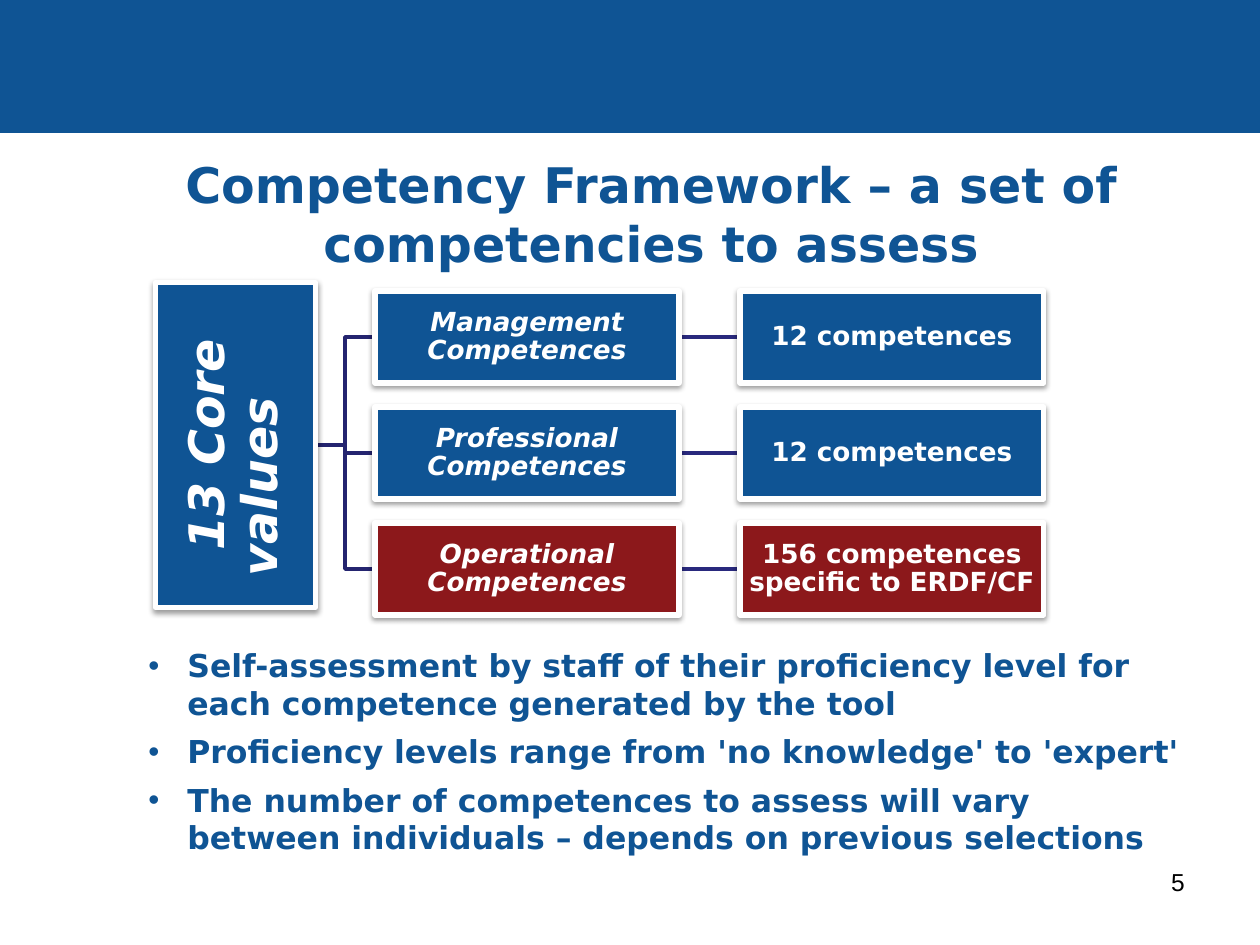
from lxml.etree import SubElement
from pptx import Presentation
from pptx.dml.color import RGBColor
from pptx.enum.shapes import MSO_CONNECTOR, MSO_SHAPE
from pptx.enum.text import MSO_ANCHOR, PP_ALIGN
from pptx.oxml import parse_xml
from pptx.oxml.ns import qn
from pptx.util import Emu, Pt

# Content
TITLE = "Competency Framework – a set of competencies to assess"
CORE = ["13 Core", "values"]
ROWS = [
    ("Management Competences", "12 competences", "blue"),
    ("Professional Competences", "12 competences", "blue"),
    ("Operational Competences", "156 competences specific to ERDF/CF", "red"),
]
BULLETS = [
    "Self-assessment by staff of their proficiency level for each competence generated by the tool",
    "Proficiency levels range from 'no knowledge' to 'expert'",
    "The number of competences to assess will vary between individuals – depends on previous selections",
]
PAGE = "5"

THEME = {
    "blue": "0F5494", "red": "8C181B", "white": "FFFFFF", "black": "000000",
    "elbow": "24246F", "link": "29297D",
    "font": "DejaVu Sans", "page_font": "Arial",
    "title": 28, "core": 28, "box": 15, "bullet": 18, "page": 14,
}

# Layout in px
SCALE = 914400 / 126
BANNER = (0, 0, 1260, 132)
TITLE_BOX = (84, 179, 1134, 128)
PAGE_BOX = (903, 861, 294, 66)
BULLET_BOX = (136, 640, 1061, 270)
CORE_BOX = (73, 365, 325, 160)
COL_X, COL_STEP, BOX_W = 375, 365, 304
ROW_Y, ROW_STEP, BOX_H = 291, 116, 92
CORE_RIGHT, CORE_MID, TRUNK_X = 315, 445, 345

SHADOW = (
    '<a:effectLst xmlns:a="http://schemas.openxmlformats.org/drawingml/2006/main">'
    '<a:outerShdw blurRad="39370" dist="20320" dir="5400000" rotWithShape="0">'
    '<a:srgbClr val="000000"><a:alpha val="38000"/></a:srgbClr>'
    '</a:outerShdw></a:effectLst>'
)


def px(n):
    return Emu(round(n * SCALE))


def color(name):
    return RGBColor.from_string(THEME[name])


def set_line(line, name, width):
    line.color.rgb = color(name)
    line.width = Pt(width)


def style(p, size, name, align, font="font", bold=True, italic=False):
    p.alignment = align
    f = p.font
    f.name, f.size, f.bold, f.italic = THEME[font], Pt(THEME[size]), bold, italic
    f.color.rgb = color(name)


def add_rect(shapes, at, fill, line, width):
    sp = shapes.add_shape(MSO_SHAPE.RECTANGLE, *map(px, at))
    sp.shadow.inherit = False
    sp.fill.solid()
    sp.fill.fore_color.rgb = color(fill)
    set_line(sp.line, line, width)
    return sp


def add_text(shapes, at, paragraphs):
    tf = shapes.add_textbox(*map(px, at)).text_frame
    tf.word_wrap = True
    tf.text = "\n".join(paragraphs)
    return tf


def add_card(shapes, at, fill, lines, size, inset, italic):
    sp = add_rect(shapes, at, fill, "white", 3)
    pr = sp._element.spPr
    pr.replace(pr.find(qn("a:effectLst")), parse_xml(SHADOW))
    tf = sp.text_frame
    tf.word_wrap = True
    tf.vertical_anchor = MSO_ANCHOR.MIDDLE
    tf.margin_left = tf.margin_right = tf.margin_top = tf.margin_bottom = px(inset)
    tf.text = "\n".join(lines)
    for p in tf.paragraphs:
        style(p, size, "white", PP_ALIGN.CENTER, italic=italic)
        p.line_spacing = 0.9
    return sp


def add_elbow(shapes, y):
    fb = shapes.build_freeform(CORE_RIGHT, CORE_MID, scale=SCALE)
    fb.add_line_segments([(TRUNK_X, CORE_MID), (TRUNK_X, y), (COL_X, y)], close=False)
    sp = fb.convert_to_shape()
    sp.shadow.inherit = False
    sp.fill.background()
    set_line(sp.line, "elbow", 2)


def add_link(shapes, y):
    c = shapes.add_connector(MSO_CONNECTOR.STRAIGHT, px(COL_X + BOX_W), px(y),
                             px(COL_X + COL_STEP), px(y))
    set_line(c.line, "link", 2)
    SubElement(c._element.spPr, qn("a:effectLst"))


def main():
    prs = Presentation()
    prs.slide_width, prs.slide_height = px(1260), px(945)
    s = prs.slides.add_slide(prs.slide_layouts[6]).shapes

    # Banner, title and page number
    add_rect(s, BANNER, "blue", "blue", 0.75)
    tf = add_text(s, TITLE_BOX, [TITLE])
    tf.vertical_anchor = MSO_ANCHOR.MIDDLE
    tf.margin_bottom = px(66)
    style(tf.paragraphs[0], "title", "blue", PP_ALIGN.CENTER)
    tf = add_text(s, PAGE_BOX, [PAGE])
    style(tf.paragraphs[0], "page", "black", PP_ALIGN.RIGHT, "page_font", False)

    # Connecting lines, behind the cards
    tops = [ROW_Y + i * ROW_STEP for i in range(len(ROWS))]
    for top in tops:
        add_elbow(s, top + BOX_H // 2)
        add_link(s, top + BOX_H // 2)

    # Core card, with its second line shifted towards the start
    core = add_card(s, CORE_BOX, "blue", CORE, "core", 2, True)
    core.rotation = 270
    core.text_frame.paragraphs[1]._p.get_or_add_pPr().set("marR", str(px(84)))

    # Competence cards
    for top, (kind, count, fill) in zip(tops, ROWS):
        for col, text in enumerate((kind, count)):
            at = (COL_X + col * COL_STEP, top, BOX_W, BOX_H)
            add_card(s, at, fill, [text], "box", 1, col == 0)

    # Bullets
    tf = add_text(s, BULLET_BOX, BULLETS)
    for p in tf.paragraphs:
        pr = p._p.get_or_add_pPr()
        pr.set("marL", str(px(39)))
        pr.set("indent", str(px(-39)))
        SubElement(pr, qn("a:buFont")).set("typeface", "Arial")
        SubElement(pr, qn("a:buChar")).set("char", "•")
        style(p, "bullet", "blue", PP_ALIGN.LEFT)
        p.space_after = Pt(6)

    prs.save("out.pptx")


if __name__ == "__main__":
    main()
